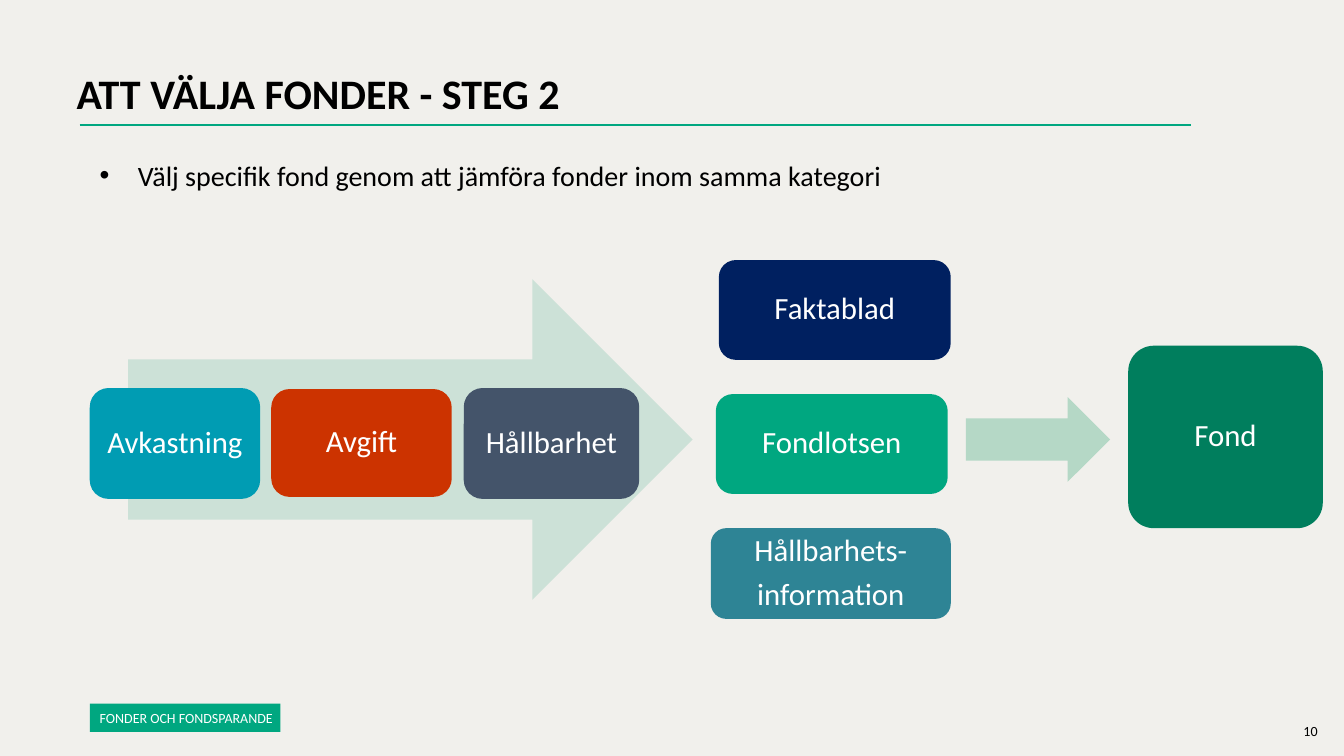
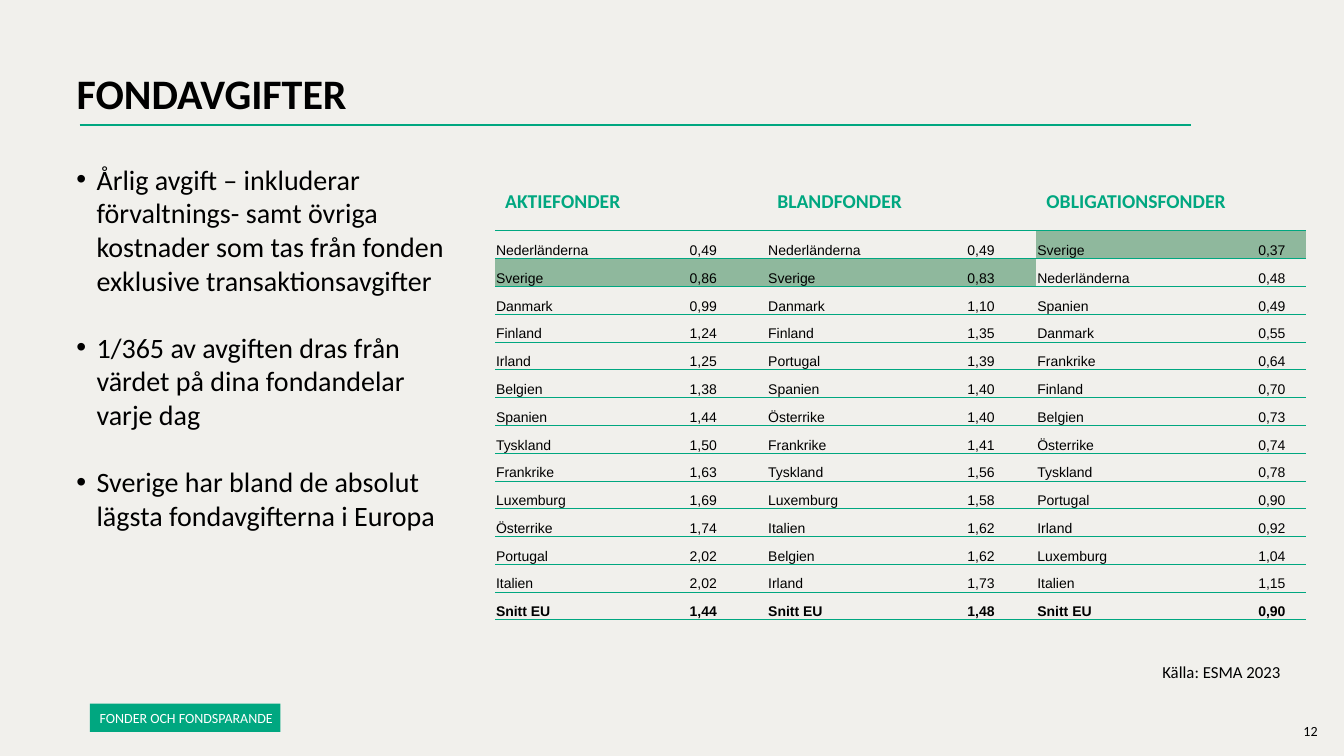
"""Build two slides on choosing funds and on fund fees."""
from itertools import chain

from lxml import etree
from pptx import Presentation
from pptx.dml.color import RGBColor
from pptx.enum import shapes, text
from pptx.oxml import ns
from pptx.util import Inches, Pt

PAPER = RGBColor(0xF1, 0xF0, 0xEC)
BLACK = RGBColor(0, 0, 0)
WHITE = RGBColor(0xFF, 0xFF, 0xFF)
GREEN = RGBColor(0x00, 0xA7, 0x80)
DARK_GREEN = RGBColor(0x00, 0x7E, 0x5D)
PALE_GREEN = RGBColor(0xCC, 0xE1, 0xD7)
SOFT_GREEN = RGBColor(0xB5, 0xD8, 0xC6)
HIGHLIGHT = RGBColor(0x8F, 0xB8, 0x9D)
CYAN = RGBColor(0x00, 0x9C, 0xB3)
RED = RGBColor(0xCC, 0x33, 0x00)
SLATE = RGBColor(0x44, 0x54, 0x6A)
NAVY = RGBColor(0x00, 0x20, 0x60)
TEAL = RGBColor(0x2E, 0x84, 0x95)

PLAIN_TABLE = "{2D5ABB26-0587-4C30-8999-92F81FD0307C}"
SIDES = ("margin_left", "margin_top", "margin_right", "margin_bottom")

CRITERIA = [
    ("Avkastning", (0.89, 3.85, 1.69, 1.1), CYAN),
    ("Avgift", (2.69, 3.86, 1.79, 1.07), RED),
    ("Hållbarhet", (4.6, 3.85, 1.74, 1.1), SLATE),
]
SOURCES = [
    ("Faktablad", (7.13, 2.58, 2.3, 0.99), NAVY),
    ("Fondlotsen", (7.1, 3.91, 2.3, 0.99), GREEN),
    ("Hållbarhets-\ninformation", (7.05, 5.24, 2.38, 0.9), TEAL),
]
FEE_POINTS = [
    "Årlig avgift – inkluderar förvaltnings- samt övriga kostnader som tas "
    "från fonden exklusive transaktionsavgifter",
    "1/365 av avgiften dras från värdet på dina fondandelar varje dag",
    "Sverige har bland de absolut lägsta fondavgifterna i Europa",
]
FEES = {
    "AKTIEFONDER": [
        ("Nederländerna", "0,49"), ("Sverige", "0,86"), ("Danmark", "0,99"),
        ("Finland", "1,24"), ("Irland", "1,25"), ("Belgien", "1,38"),
        ("Spanien", "1,44"), ("Tyskland", "1,50"), ("Frankrike", "1,63"),
        ("Luxemburg", "1,69"), ("Österrike", "1,74"), ("Portugal", "2,02"),
        ("Italien", "2,02"), ("Snitt EU", "1,44"),
    ],
    "BLANDFONDER": [
        ("Nederländerna", "0,49"), ("Sverige", "0,83"), ("Danmark", "1,10"),
        ("Finland", "1,35"), ("Portugal", "1,39"), ("Spanien", "1,40"),
        ("Österrike", "1,40"), ("Frankrike", "1,41"), ("Tyskland", "1,56"),
        ("Luxemburg", "1,58"), ("Italien", "1,62"), ("Belgien", "1,62"),
        ("Irland", "1,73"), ("Snitt EU", "1,48"),
    ],
    "OBLIGATIONSFONDER": [
        ("Sverige", "0,37"), ("Nederländerna", "0,48"), ("Spanien", "0,49"),
        ("Danmark", "0,55"), ("Frankrike", "0,64"), ("Finland", "0,70"),
        ("Belgien", "0,73"), ("Österrike", "0,74"), ("Tyskland", "0,78"),
        ("Portugal", "0,90"), ("Irland", "0,92"), ("Luxemburg", "1,04"),
        ("Italien", "1,15"), ("Snitt EU", "0,90"),
    ],
}


def inches(values):
    """Turn a row of numbers into lengths."""
    return [Inches(value) for value in values]


def apply(target, formats):
    """Set each named format value on the target."""
    for name, value in formats.items():
        setattr(target, name, value)


class Deck:
    """Hold the shared style and the current slide."""

    def __init__(self):
        """Start an empty widescreen deck on a paper-coloured master."""
        self.prs = Presentation()
        apply(self.prs, {"slide_width": Inches(13.33), "slide_height": Inches(7.5)})
        self.fill(self.prs.slide_master.background, PAPER)
        self.slide = None

    def fill(self, target, color):
        """Fill a target with one colour."""
        target.fill.solid()
        target.fill.fore_color.rgb = color

    def put_text(self, paragraph, words, size, color=BLACK, bold=False, face="Calibri", **layout):
        """Set the words and format of one paragraph."""
        paragraph.text = words
        apply(paragraph, layout)
        apply(paragraph.font, {"size": Pt(size), "bold": bold, "name": face})
        paragraph.font.color.rgb = color

    def start(self, title, number):
        """Add a slide with its title, rule, section tag and page number."""
        self.slide = self.prs.slides.add_slide(self.prs.slide_layouts[5])
        heading = self.slide.shapes.title
        apply(heading, dict(zip(("left", "top", "width", "height"),
                                inches((0.66, 0.68, 12.21, 0.84)))))
        apply(heading.text_frame, {"vertical_anchor": text.MSO_ANCHOR.TOP,
                                   "auto_size": text.MSO_AUTO_SIZE.NONE})
        self.put_text(heading.text_frame.paragraphs[0], title, 30, bold=True,
                      alignment=text.PP_ALIGN.LEFT, line_spacing=0.9)
        self.rule(0.79, 11.81, 1.24)
        tag = self.label("FONDER OCH FONDSPARANDE", (0.89, 6.98, 1.89, 0.28), 10, WHITE)
        self.fill(tag, GREEN)
        apply(tag.text_frame, dict(zip(SIDES, inches((0.1, 0.08, 0.04, 0.05))),
                                   vertical_anchor=text.MSO_ANCHOR.MIDDLE))
        tag.text_frame.paragraphs[0].line_spacing = 0.9
        self.label(number, (12.83, 7.12, 0.4, 0.27), 10)

    def rule(self, left, right, top):
        """Draw the line below the title."""
        line = self.slide.shapes.add_connector(
            shapes.MSO_CONNECTOR.STRAIGHT, *inches((left, top, right, top)))
        line.line.color.rgb = GREEN
        line.line.width = Pt(1.5)
        etree.SubElement(line._element.spPr, ns.qn("a:effectLst"))

    def label(self, words, box, size, color=BLACK):
        """Add a one-line text box."""
        label = self.slide.shapes.add_textbox(*inches(box))
        label.text_frame.word_wrap = False
        self.put_text(label.text_frame.paragraphs[0], words, size, color)
        return label

    def bullets(self, points, box, indent):
        """Add a bulleted list with an open line between points."""
        frame = self.slide.shapes.add_textbox(*inches(box)).text_frame
        frame.word_wrap = True
        for index, point in enumerate(points):
            paragraph = frame.add_paragraph() if index else frame.paragraphs[0]
            props = paragraph._p.get_or_add_pPr()
            props.set("marL", str(Inches(indent)))
            props.set("indent", str(-Inches(indent)))
            etree.SubElement(props, ns.qn("a:buFont"), typeface="Arial")
            etree.SubElement(props, ns.qn("a:buChar"), char="•")
            self.put_text(paragraph, point, 20, space_before=Pt(24 if index else 0))

    def shape(self, kind, box, color):
        """Add a flat shape without outline."""
        shape = self.slide.shapes.add_shape(kind, *inches(box))
        shape.shadow.inherit = False
        self.fill(shape, color)
        shape.line.fill.background()
        return shape

    def arrow(self, box, color):
        """Add a block arrow pointing right."""
        self.shape(shapes.MSO_SHAPE.RIGHT_ARROW, box, color)

    def card(self, words, box, color, roundness=0.17):
        """Add a rounded card with centred text."""
        card = self.shape(shapes.MSO_SHAPE.ROUNDED_RECTANGLE, box, color)
        card.adjustments[0] = roundness
        frame = card.text_frame
        apply(frame, dict.fromkeys(SIDES, Inches(0.05)))
        apply(frame, {"word_wrap": True, "vertical_anchor": text.MSO_ANCHOR.MIDDLE})
        for index, line in enumerate(words.split("\n")):
            paragraph = frame.add_paragraph() if index else frame.paragraphs[0]
            self.put_text(paragraph, line, 22, WHITE, alignment=text.PP_ALIGN.CENTER,
                          line_spacing=0.9, space_after=Pt(7.5))

    def underline(self, cell, width):
        """Draw a green border below a table cell."""
        border = etree.Element(ns.qn("a:lnB"), w=str(Pt(width)))
        solid = etree.SubElement(border, ns.qn("a:solidFill"))
        etree.SubElement(solid, ns.qn("a:srgbClr"), val=str(GREEN))
        cell._tc.get_or_add_tcPr().insert(0, border)

    def fee_table(self, fees, box, widths, header_height):
        """Add the fee table, with a country and a value column per fund type."""
        rows = list(zip(*fees.values()))
        table = self.slide.shapes.add_table(
            len(rows) + 1, len(widths), *inches(box)).table
        apply(table, {"first_row": False, "horz_banding": False})
        table._tbl.tblPr.find(ns.qn("a:tableStyleId")).text = PLAIN_TABLE
        for column, width in zip(table.columns, widths):
            column.width = Inches(width)
        row_height = (box[3] - header_height) / len(rows)
        for index, row in enumerate(table.rows):
            row.height = Inches(row_height if index else header_height)
        for index, heading in enumerate(fees):
            self.put_text(table.cell(0, 2 * index).text_frame.paragraphs[0],
                          heading, 14, GREEN, bold=True)
        for cell in table.rows[0].cells:
            cell.fill.background()
            self.underline(cell, 1)
        for index, row in enumerate(rows, 1):
            for column, words in enumerate(chain.from_iterable(row)):
                cell = table.cell(index, column)
                apply(cell, dict(zip(SIDES, inches((0.01, 0.01, 0.01, 0))),
                                 vertical_anchor=text.MSO_ANCHOR.BOTTOM))
                align = text.PP_ALIGN.CENTER if column % 2 else text.PP_ALIGN.LEFT
                self.put_text(cell.text_frame.paragraphs[0], words, 10, face="Arial",
                              bold=index == len(rows), alignment=align)
                if row[column // 2][0] == "Sverige":
                    self.fill(cell, HIGHLIGHT)
                else:
                    cell.fill.background()
                self.underline(cell, 0.5)


def main():
    """Build both slides and save them."""
    deck = Deck()

    deck.start("ATT VÄLJA FONDER - STEG 2", "10")
    deck.arrow((1.27, 2.77, 5.6, 3.18), PALE_GREEN)
    for words, box, color in CRITERIA + SOURCES:
        deck.card(words, box, color)
    deck.arrow((9.58, 3.94, 1.43, 0.84), SOFT_GREEN)
    deck.card("Fond", (11.19, 3.43, 1.93, 1.81), DARK_GREEN, 0.14)
    deck.bullets(["Välj specifik fond genom att jämföra fonder inom samma kategori"],
                 (0.89, 1.52, 9.71, 0.66), 0.38)

    deck.start("FONDAVGIFTER", "12")
    deck.bullets(FEE_POINTS, (0.66, 1.56, 3.93, 4.62), 0.2)
    deck.label("Källa: ESMA 2023", (11.43, 6.52, 1.43, 0.3), 12)
    deck.fee_table(FEES, (4.91, 1.83, 8.05, 4.32),
                   (1.43, 1.27, 1.57, 1.1, 2, 0.67), 0.46)

    deck.prs.save("out.pptx")


if __name__ == "__main__":
    main()
